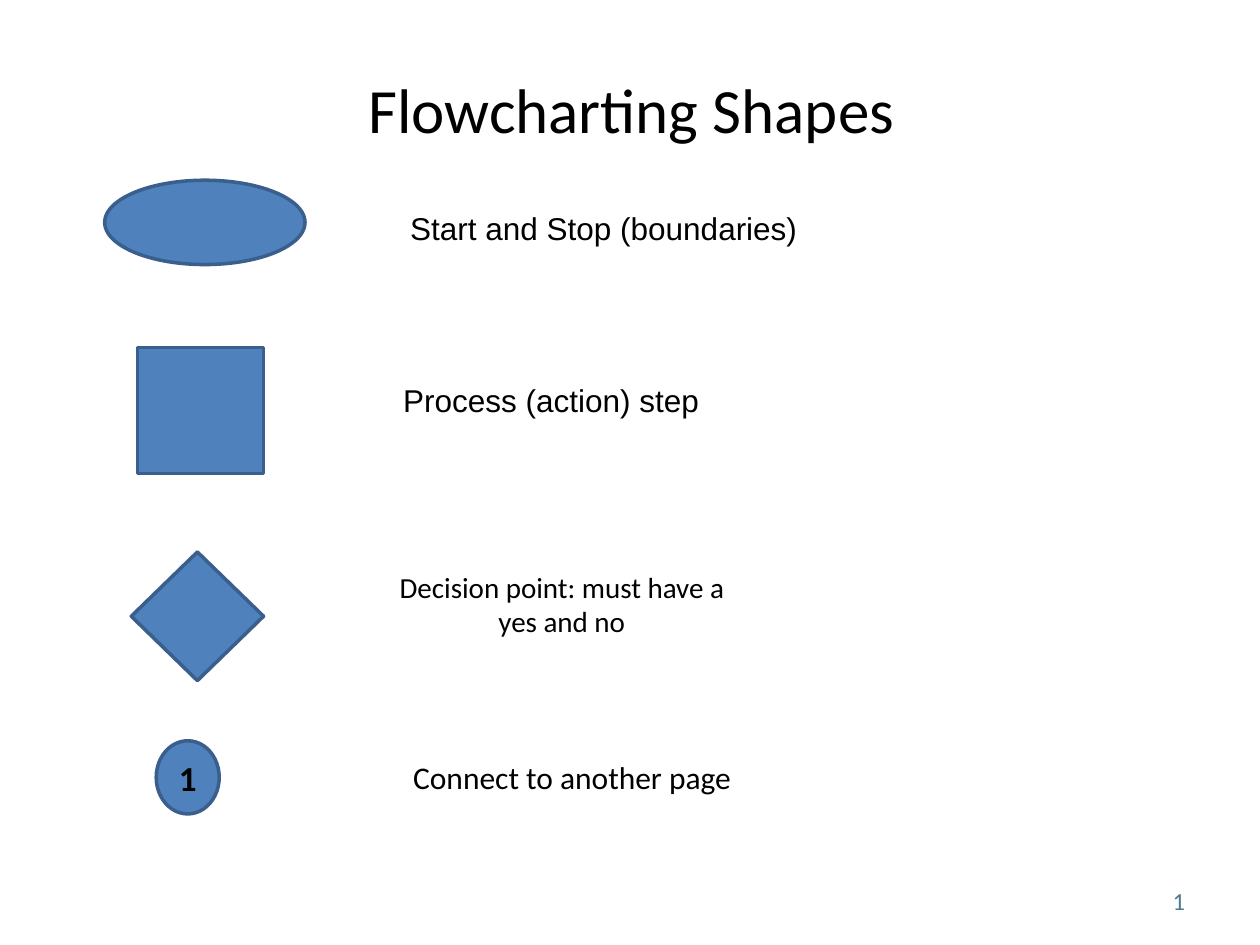
from pptx import Presentation
from pptx.dml.color import RGBColor
from pptx.enum import shapes, text
from pptx.util import Pt

COLORS = {"ink": "000000", "fill": "4F81BD", "edge": "3A5F8C", "page": "517990"}
FORMS = shapes.MSO_SHAPE
ALIGN = text.PP_ALIGN


def color(name):
    return RGBColor.from_string(COLORS[name])


def write(shape, words, size=18, font="Calibri", ink="ink", bold=False,
          align=ALIGN.CENTER):
    frame = shape.text_frame
    frame.word_wrap = True
    frame.vertical_anchor = text.MSO_ANCHOR.MIDDLE
    para = frame.paragraphs[0]
    para.alignment = align
    run = para.add_run()
    run.text = words
    run.font.size = Pt(size)
    run.font.name = font
    run.font.bold = bold
    run.font.color.rgb = color(ink)


def label(slide, words, box, **style):
    write(slide.shapes.add_textbox(*map(Pt, box)), words, **style)


def symbol(slide, form, box):
    shape = slide.shapes.add_shape(form, *map(Pt, box))
    shape.shadow.inherit = False
    shape.fill.solid()
    shape.fill.fore_color.rgb = color("fill")
    shape.line.color.rgb = color("edge")
    shape.line.width = Pt(2)
    return shape


def main():
    deck = Presentation()
    deck.slide_width, deck.slide_height = Pt(720), Pt(540)
    slide = deck.slides.add_slide(deck.slide_layouts[6])

    label(slide, "Flowcharting Shapes", (36.7, 30.2, 648, 64), size=36)

    rows = [
        (FORMS.OVAL, (59.8, 103, 114.5, 48.2),
         "Start and Stop (boundaries)", (216, 108, 258, 45), {"font": "Arial"}),
        (FORMS.RECTANGLE, (78.5, 198.7, 72, 72),
         "Process (action) step", (210, 206, 210, 45), {"font": "Arial"}),
        (FORMS.FLOWCHART_DECISION, (75, 315.4, 75.6, 73.5),
         "Decision point: must have a yes and no", (216, 322.6, 210, 45),
         {"size": 16.6}),
        (FORMS.OVAL, (89.3, 423.3, 36, 41.8),
         "Connect to another page", (222, 421.2, 210, 45), {}),
    ]
    for form, spot, words, box, style in rows:
        shape = symbol(slide, form, spot)
        label(slide, words, box, **style)
    write(shape, "1", size=20, bold=True)

    label(slide, "1", (516.2, 500.4, 168, 28.8), size=14, ink="page",
          align=ALIGN.RIGHT)
    deck.save("out.pptx")


if __name__ == "__main__":
    main()
